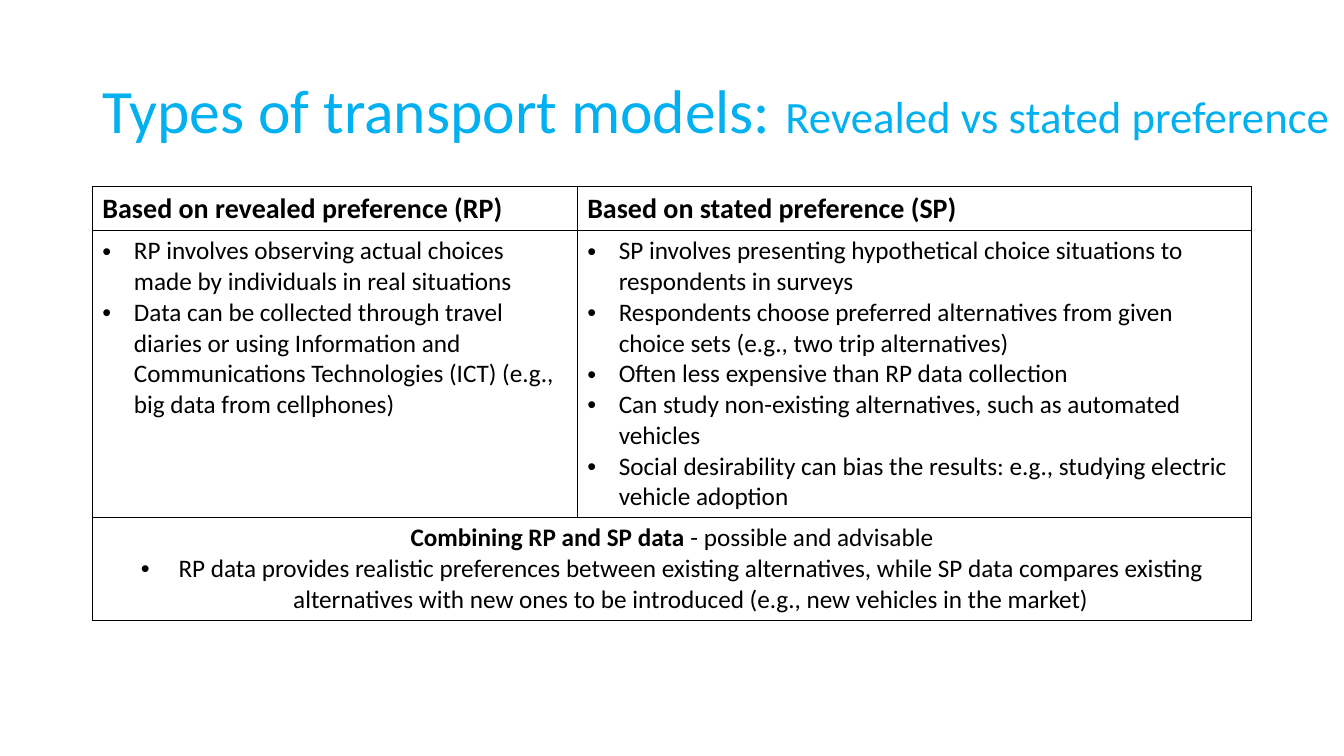
from dataclasses import dataclass

from lxml import etree
from pptx import Presentation
from pptx.dml.color import RGBColor
from pptx.enum.text import MSO_ANCHOR, MSO_AUTO_SIZE, PP_ALIGN
from pptx.oxml.ns import qn
from pptx.util import Pt

MIDDLE = MSO_ANCHOR.MIDDLE
NO_FIT = MSO_AUTO_SIZE.NONE
LEFT, CENTER = PP_ALIGN.LEFT, PP_ALIGN.CENTER


@dataclass(frozen=True)
class Theme:
    font: str = "Calibri"
    accent: RGBColor = RGBColor(0x00, 0xB0, 0xF0)
    ink: RGBColor = RGBColor(0, 0, 0)
    paper: RGBColor = RGBColor(255, 255, 255)
    title: int = 44
    subtitle: int = 32
    header: int = 20
    body: int = 18
    border: int = 1


THEME = Theme()

RP_POINTS = [
    "RP involves observing actual choices made by individuals in real situations",
    "Data can be collected through travel diaries or using Information and "
    "Communications Technologies (ICT) (e.g., big data from cellphones)",
]
SP_POINTS = [
    "SP involves presenting hypothetical choice situations to respondents in surveys",
    "Respondents choose preferred alternatives from given choice sets "
    "(e.g., two trip alternatives)",
    "Often less expensive than RP data collection",
    "Can study non-existing alternatives, such as automated vehicles",
    "Social desirability can bias the results: e.g., studying electric vehicle adoption",
]
COMBINED_POINT = (
    "RP data provides realistic preferences between existing alternatives, while SP data "
    "compares existing alternatives with new ones to be introduced "
    "(e.g., new vehicles in the market)"
)


def add_run(p, text, size, color=THEME.ink, bold=False):
    r = p.add_run()
    r.text = text
    r.font.name = THEME.font
    r.font.size = Pt(size)
    r.font.bold = bold
    r.font.color.rgb = color


def add_bullet(p, text, indent, align=LEFT):
    p.alignment = align
    pPr = p._p.get_or_add_pPr()
    pPr.set("marL", str(Pt(indent)))
    pPr.set("indent", str(-Pt(indent)))
    etree.SubElement(pPr, qn("a:buFont")).set("typeface", "Arial")
    etree.SubElement(pPr, qn("a:buChar")).set("char", "•")
    add_run(p, text, THEME.body)


def format_cell(cell):
    cell.fill.solid()
    cell.fill.fore_color.rgb = THEME.paper
    tcPr = cell._tc.get_or_add_tcPr()
    for i, side in enumerate(("a:lnL", "a:lnR", "a:lnT", "a:lnB")):
        ln = etree.Element(qn(side))
        ln.set("w", str(Pt(THEME.border)))
        fill = etree.SubElement(ln, qn("a:solidFill"))
        etree.SubElement(fill, qn("a:srgbClr")).set("val", str(THEME.ink))
        tcPr.insert(i, ln)


def add_title(s, x, y, w, h):
    sp = s.shapes.title
    sp.left, sp.top, sp.width, sp.height = Pt(x), Pt(y), Pt(w), Pt(h)
    tf = sp.text_frame
    tf.word_wrap = True
    tf.auto_size = NO_FIT
    tf.vertical_anchor = MIDDLE
    p = tf.paragraphs[0]
    p.alignment = LEFT
    p.line_spacing = 0.9
    add_run(p, "Types of transport models: ", THEME.title, THEME.accent)
    add_run(p, "Revealed vs stated preference", THEME.subtitle, THEME.accent)


def add_comparison(s, x, y, w, h):
    row_heights = (31.6, h - 31.6 - 73.1, 73.1)
    col_widths = (346.3, w - 346.3)
    table = s.shapes.add_table(3, 2, Pt(x), Pt(y), Pt(w), Pt(h)).table
    table.first_row = False
    table.horz_banding = False
    for row, height in zip(table.rows, row_heights):
        row.height = Pt(height)
    for col, width in zip(table.columns, col_widths):
        col.width = Pt(width)
    for cell in table.iter_cells():
        format_cell(cell)

    columns = (
        ("Based on revealed preference (RP)", RP_POINTS),
        ("Based on stated preference (SP)", SP_POINTS),
    )
    for c, (heading, points) in enumerate(columns):
        add_run(table.cell(0, c).text_frame.paragraphs[0], heading, THEME.header, bold=True)
        tf = table.cell(1, c).text_frame
        for i, point in enumerate(points):
            add_bullet(tf.add_paragraph() if i else tf.paragraphs[0], point, 22.5)

    combined = table.cell(2, 0)
    combined.merge(table.cell(2, 1))
    tf = combined.text_frame
    p = tf.paragraphs[0]
    p.alignment = CENTER
    add_run(p, "Combining RP and SP data ", THEME.body, bold=True)
    add_run(p, "- possible and advisable", THEME.body)
    add_bullet(tf.add_paragraph(), COMBINED_POINT, 27, CENTER)


def main():
    prs = Presentation()
    prs.slide_width, prs.slide_height = Pt(960), Pt(540)
    s = prs.slides.add_slide(prs.slide_layouts[5])
    add_comparison(s, 66, 133.2, 828, 309.7)
    add_title(s, 66, 28.8, 894, 104.4)
    prs.save("out.pptx")


if __name__ == "__main__":
    main()
